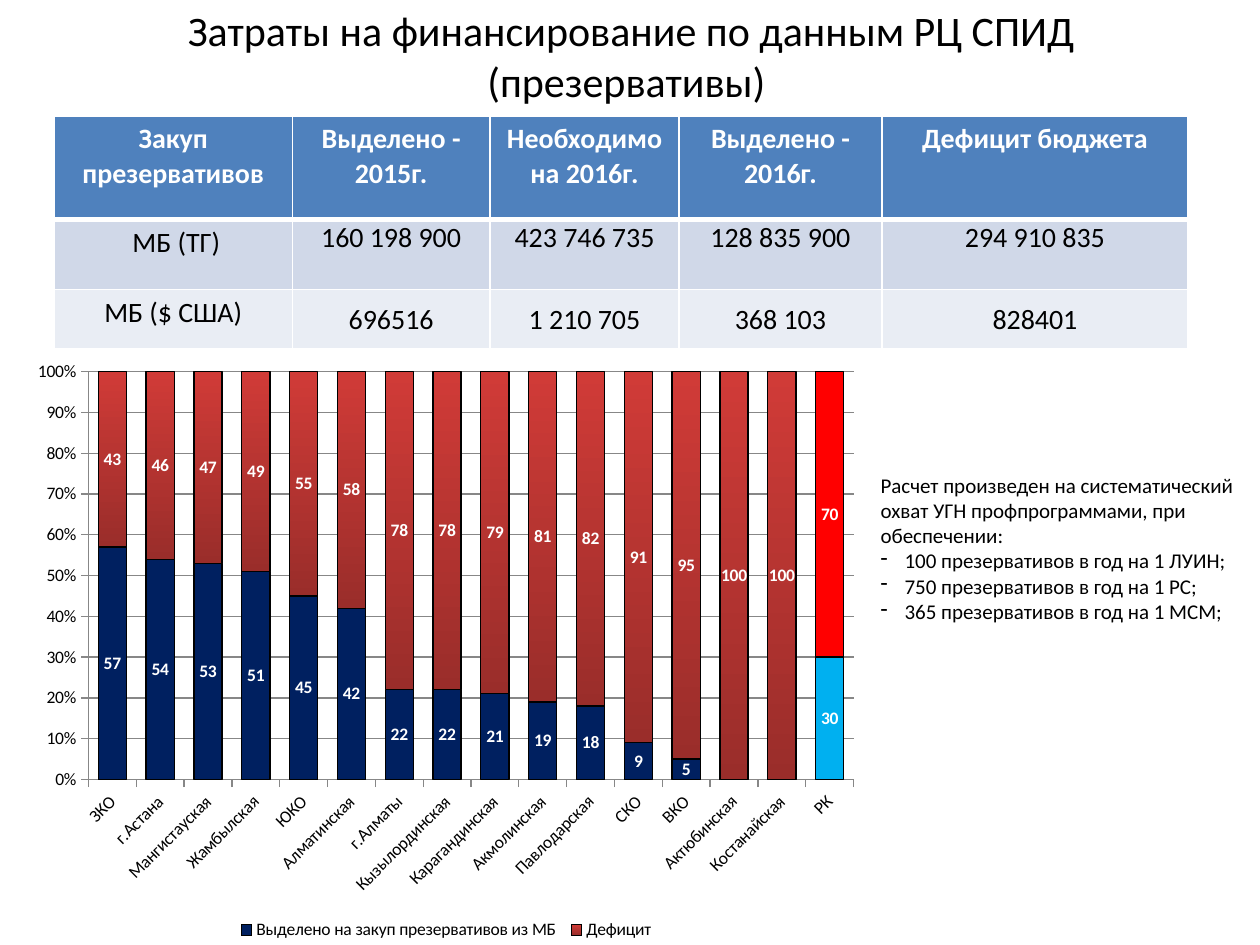
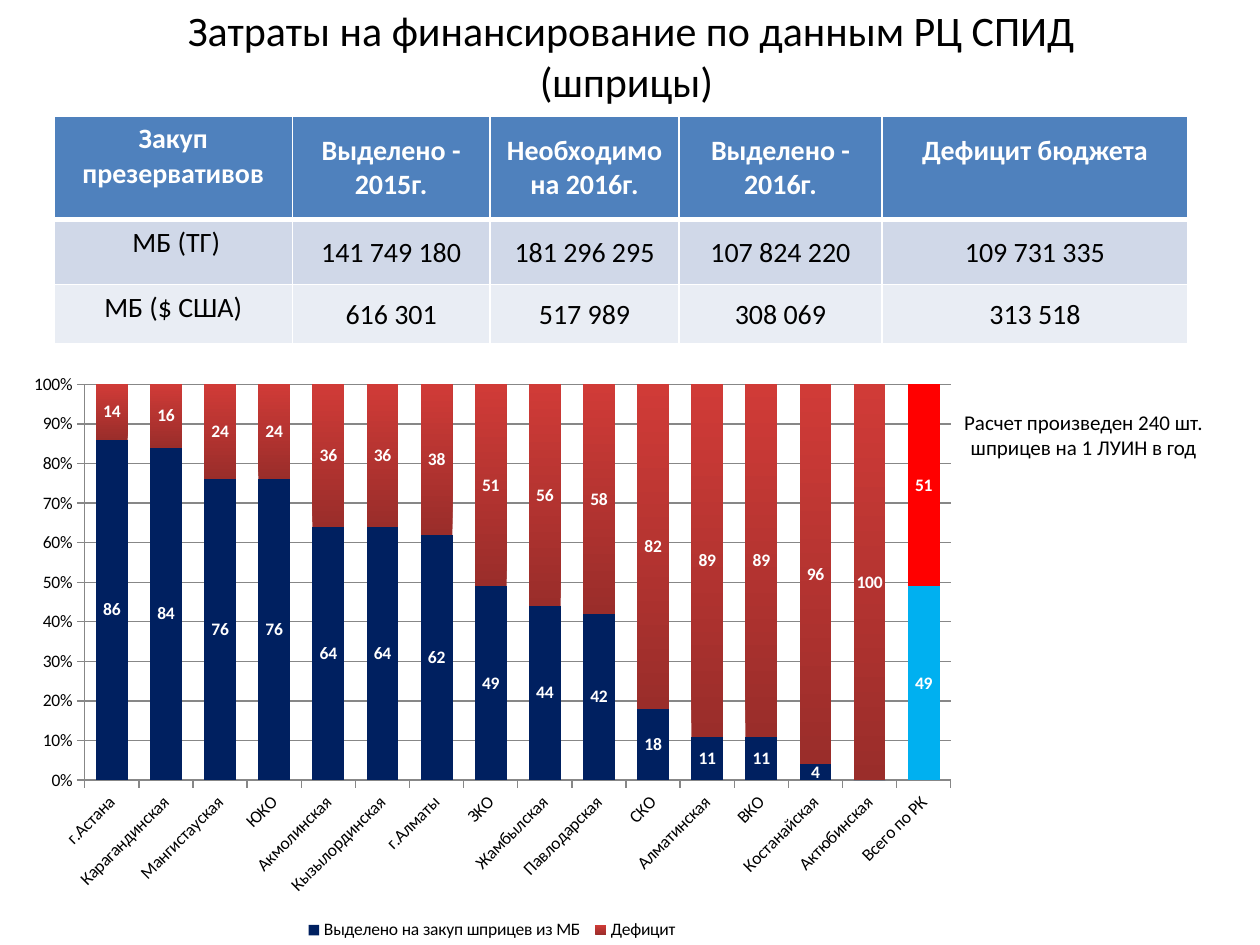
from pptx import Presentation, util as u
from pptx.chart.data import CategoryChartData
from pptx.dml.color import RGBColor
from pptx.enum import chart as ch, text
from pptx.oxml import parse_xml
from pptx.oxml.ns import nsdecls, qn

FONT = "Calibri"
COLORS = {
    "text": "000000", "white": "FFFFFF", "header": "4F81BD",
    "row_dark": "D0D8E8", "row_light": "E9EDF4", "grid": "878787",
    "allocated": "002060", "allocated_total": "00B0F0",
    "deficit_top": "D03B37", "deficit_bottom": "9A2D2A", "deficit_total": "FF0000",
}
TITLE = "Затраты на финансирование по данным РЦ СПИД\v({}) "
TABLE_HEADER = ["Закуп презервативов", "Выделено - 2015г.", "Необходимо на 2016г.",
                "Выделено - 2016г.", "Дефицит бюджета"]
COLUMN_WIDTHS = [1.89, 1.57, 1.5, 1.61, 2.43]
PLOT_BOTTOM = 6.19

CONDOM_COSTS = [[" МБ (ТГ)", "160 198 900", "423 746 735", "128 835 900", "294 910 835"],
                ["МБ ($ США)", "696516", "1 210 705", "368 103", "828401"]]
SYRINGE_COSTS = [[" МБ (ТГ)", "141 749 180", "181 296 295", "107 824 220", "109 731 335"],
                 ["МБ ($ США)", "616 301", "517 989", "308 069", "313 518"]]
CONDOM_SHARES = {
    "ЗКО": 57, "г.Астана": 54, "Мангистауская": 53, "Жамбылская": 51, "ЮКО": 45,
    "Алматинская": 42, "г.Алматы": 22, "Кызылординская": 22, "Карагандинская": 21,
    "Акмолинская": 19, "Павлодарская": 18, "СКО": 9, "ВКО": 5, "Актюбинская": 0,
    "Костанайская": 0, "РК": 30,
}
SYRINGE_SHARES = {
    "г.Астана": 86, "Карагандинская": 84, "Мангистауская": 76, "ЮКО": 76,
    "Акмолинская": 64, "Кызылординская": 64, "г.Алматы": 62, "ЗКО": 49,
    "Жамбылская": 44, "Павлодарская": 42, "СКО": 18, "Алматинская": 11, "ВКО": 11,
    "Костанайская": 4, "Актюбинская": 0, "Всего по РК": 49,
}


def rgb(name):
    return RGBColor.from_string(COLORS[name])


def style_font(font, size, color="text", bold=False):
    font.name, font.size, font.bold = FONT, u.Pt(size), bold
    font.color.rgb = rgb(color)


def paint(fill, color):
    fill.solid()
    fill.fore_color.rgb = rgb(color)


def add_text(slide, box, lines, size, align=None, anchor=text.MSO_ANCHOR.TOP):
    frame = slide.shapes.add_textbox(*map(u.Inches, box)).text_frame
    frame.word_wrap = True
    frame.vertical_anchor = anchor
    for index, line in enumerate(lines):
        paragraph = frame.paragraphs[0] if index == 0 else frame.add_paragraph()
        paragraph.text = line
        paragraph.alignment = align
        style_font(paragraph.font, size)
    return frame


def add_title(slide, item):
    add_text(slide, (0.51, 0.21, 9, 0.46), [TITLE.format(item)], 24,
             text.PP_ALIGN.CENTER, text.MSO_ANCHOR.MIDDLE)


def add_dash(paragraph):
    """Give the paragraph a hanging dash bullet."""
    properties = paragraph._p.get_or_add_pPr()
    properties.set("marL", str(u.Inches(0.19)))
    properties.set("indent", str(-u.Inches(0.19)))
    properties.append(parse_xml(f'<a:buChar {nsdecls("a")} char="-"/>'))
    # The bullet must precede the default run properties.
    properties.append(properties.find(qn("a:defRPr")))


def add_borders(cell, row):
    """White rules, heavier between the header and the body."""
    widths = {"L": 1, "R": 1, "T": 3 if row == 1 else 1, "B": 3 if row == 0 else 1}
    for index, (side, width) in enumerate(widths.items()):
        cell._tc.get_or_add_tcPr().insert(index, parse_xml(
            f'<a:ln{side} {nsdecls("a")} w="{u.Pt(width)}"><a:solidFill>'
            f'<a:srgbClr val="{COLORS["white"]}"/></a:solidFill></a:ln{side}>'))


def add_cost_table(slide, costs, tenge_height, tenge_anchor, header_top):
    """header_top is the upper margin of the header cells after the first."""
    heights = [0.82, tenge_height, 0.47]
    fills = ["header", "row_dark", "row_light"]
    anchors = [text.MSO_ANCHOR.TOP, tenge_anchor, text.MSO_ANCHOR.MIDDLE]
    table = slide.shapes.add_table(
        3, 5, u.Inches(0.43), u.Inches(0.92), u.Inches(9), u.Inches(sum(heights))).table
    for column, width in zip(table.columns, COLUMN_WIDTHS):
        column.width = u.Inches(width)
    for r, values in enumerate([TABLE_HEADER, *costs]):
        table.rows[r].height = u.Inches(heights[r])
        for c, value in enumerate(values):
            cell = table.cell(r, c)
            cell.text = value
            paragraph = cell.text_frame.paragraphs[0]
            paragraph.alignment = text.PP_ALIGN.CENTER
            style_font(paragraph.font, 16, "text" if r else "white", bold=r == 0)
            paint(cell.fill, fills[r])
            add_borders(cell, r)
            if c and r:
                cell.margin_left = cell.margin_right = cell.margin_top = u.Inches(0.01)
                cell.margin_bottom = 0
                cell.vertical_anchor = anchors[r]
            elif c:
                cell.margin_top = u.Inches(header_top)


def place_plot(chart, box, plot):
    """Fix the inner plot area; plot is left, top, width in slide inches."""
    left, top, width, height = box
    plot_left, plot_top, plot_width = plot
    shares = {"x": (plot_left - left) / width, "y": (plot_top - top) / height,
              "w": plot_width / width, "h": (PLOT_BOTTOM - plot_top) / height}
    values = "".join(f'<c:{key} val="{share:.3f}"/>' for key, share in shares.items())
    area = chart._chartSpace.chart.plotArea
    for layout in area.findall(qn("c:layout")):
        area.remove(layout)
    area.insert(0, parse_xml(
        f'<c:layout {nsdecls("c")}><c:manualLayout><c:layoutTarget val="inner"/>'
        f'<c:xMode val="edge"/><c:yMode val="edge"/>{values}</c:manualLayout></c:layout>'))


def style_axes(chart):
    for axis in (chart.category_axis, chart.value_axis):
        style_font(axis.tick_labels.font, 10)
        axis.format.line.color.rgb = rgb("grid")
        axis.major_tick_mark = ch.XL_TICK_MARK.OUTSIDE
    chart.category_axis._element.find(qn("c:txPr")).find(qn("a:bodyPr")).set("rot", "-2700000")
    shares = chart.value_axis
    shares.has_major_gridlines = True
    shares.major_gridlines.format.line.color.rgb = rgb("grid")
    shares.tick_labels.number_format = "0%"
    shares.tick_labels.number_format_is_linked = False


def style_series(series, total_color, outlined):
    total = series.points[len(series.values) - 1].format
    paint(total.fill, total_color)
    if outlined:
        for part in (series.format, total):
            part.line.color.rgb = rgb("text")
            part.line.width = u.Pt(0.75)
    labels = series.data_labels
    labels.show_value = True
    labels.number_format, labels.number_format_is_linked = "0", False
    style_font(labels.font, 10, "white", bold=True)
    empty = [i for i, value in enumerate(series.values) if value == 0]
    for position, index in enumerate(empty):
        labels._element.insert(position, parse_xml(
            f'<c:dLbl {nsdecls("c")}><c:idx val="{index}"/><c:delete val="1"/></c:dLbl>'))


def add_share_chart(slide, box, plot, item, shares, outlined=False):
    data = CategoryChartData()
    data.categories = list(shares)
    data.add_series(f"Выделено на закуп {item} из МБ ", shares.values())
    data.add_series("Дефицит", [100 - share for share in shares.values()])
    chart = slide.shapes.add_chart(
        ch.XL_CHART_TYPE.COLUMN_STACKED_100, *map(u.Inches, box), data).chart
    style_font(chart.font, 10)
    chart.has_title = False
    chart.has_legend = True
    chart.legend.position = ch.XL_LEGEND_POSITION.BOTTOM
    chart.legend.include_in_layout = False
    style_axes(chart)
    place_plot(chart, box, plot)
    bars = chart.plots[0]
    bars.gap_width, bars.overlap, bars.vary_by_categories = 70, 100, False
    allocated, deficit = bars.series
    paint(allocated.format.fill, "allocated")
    gradient = deficit.format.fill
    gradient.gradient()
    gradient.gradient_angle = 90
    for stop, color in zip(gradient.gradient_stops, ("deficit_bottom", "deficit_top")):
        stop.color.rgb = rgb(color)
    style_series(allocated, "allocated_total", outlined)
    style_series(deficit, "deficit_total", outlined)


def main():
    deck = Presentation()
    deck.slide_width, deck.slide_height = u.Inches(10), u.Inches(7.5)
    blank = deck.slide_layouts[6]

    condoms = deck.slides.add_slide(blank)
    add_title(condoms, "презервативы")
    add_cost_table(condoms, CONDOM_COSTS, 0.56, text.MSO_ANCHOR.TOP, header_top=0.05)
    add_share_chart(condoms, (0.17, 2.78, 6.74, 4.72), (0.7, 2.95, 6.07),
                    "презервативов", CONDOM_SHARES, outlined=True)
    basis = add_text(condoms, (6.89, 3.7, 3.11, 1.72), [
        "Расчет произведен на систематический охват УГН профпрограммами, при обеспечении:",
        "100 презервативов в год на 1 ЛУИН;",
        "750 презервативов в год на 1 РС;",
        "365 презервативов в год на 1 МСМ;"], 12)
    for norm in basis.paragraphs[1:]:
        add_dash(norm)

    syringes = deck.slides.add_slide(blank)
    add_title(syringes, "шприцы")
    add_cost_table(syringes, SYRINGE_COSTS, 0.52, text.MSO_ANCHOR.MIDDLE, header_top=0.14)
    add_text(syringes, (7.36, 3.2, 2.48, 0.5),
             ["Расчет произведен 240 шт. шприцев на 1 ЛУИН в год"], 12, text.PP_ALIGN.CENTER)
    add_share_chart(syringes, (0.12, 2.88, 7.57, 4.62), (0.67, 3.05, 6.87),
                    "шприцев", SYRINGE_SHARES)
    deck.save("out.pptx")


if __name__ == "__main__":
    main()
